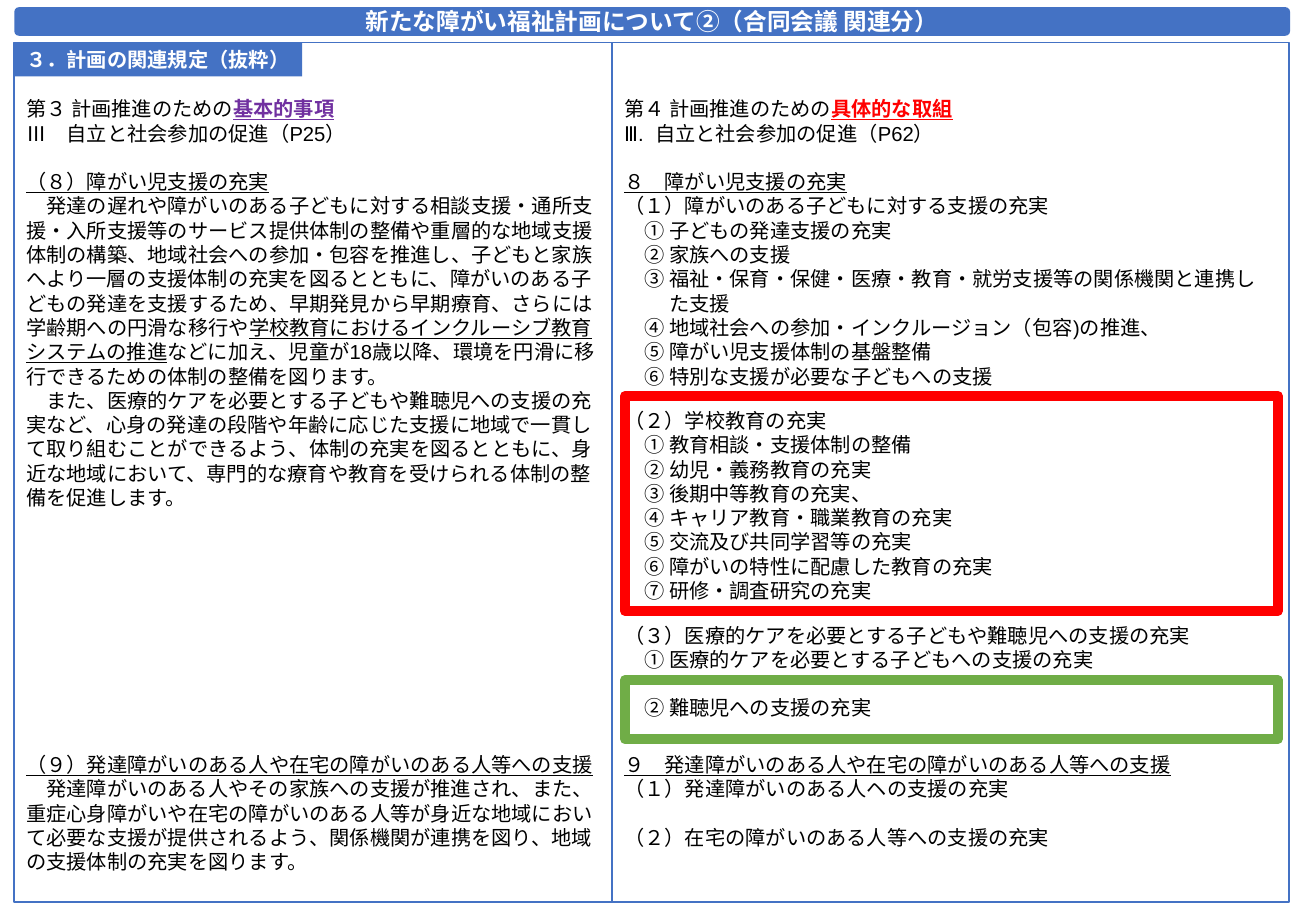
import dataclasses
import pptx
import pptx.dml.color
import pptx.enum.shapes
import pptx.enum.text
import pptx.util
from pptx.util import Cm, Pt

SHAPE = pptx.enum.shapes.MSO_SHAPE
ANCHOR = pptx.enum.text.MSO_ANCHOR
ALIGN = pptx.enum.text.PP_ALIGN


@dataclasses.dataclass(frozen=True)
class Theme:
    """Colours, fonts, type sizes and line widths."""
    blue: str = "4472C4"
    white: str = "FFFFFF"
    black: str = "000000"
    purple: str = "7030A0"
    red: str = "FF0000"
    green: str = "70AD47"
    head_font: str = "Calibri"
    body_font: str = "Arial"
    title: int = 14
    body: int = 12
    thin: int = 1
    thick: int = 6


T = Theme()
ITEM = 0.42
CONTINUED = 0.94
LINE_GAP = 14.4
BLOCK_GAP = 12


@dataclasses.dataclass
class Para:
    """One paragraph: pieces of (text, underlined, accent), gap in points, indents in cm."""
    pieces: list
    gap: float = 0
    left: float = 0
    first: float = 0


def plain(text, **place):
    """Return a paragraph in the ordinary style."""
    return Para([(text, False, None)], **place)


def heading(text, gap):
    """Return an underlined paragraph."""
    return Para([(text, True, None)], gap)


def items(*texts):
    """Return indented list lines."""
    return [plain(text, left=ITEM) for text in texts]


BASICS = [
    Para([("第３ 計画推進のための", False, None), ("基本的事項", True, T.purple)]),
    plain("Ⅲ　自立と社会参加の促進（P25）"),
    heading("（８）障がい児支援の充実", LINE_GAP),
    Para([
        ("発達の遅れや障がいのある子どもに対する相談支援・通所支援・入所支援等の"
         "サービス提供体制の整備や重層的な地域支援体制の構築、地域社会への参加・包容を推進し、"
         "子どもと家族へより一層の支援体制の充実を図るとともに、障がいのある子どもの発達を"
         "支援するため、早期発見から早期療育、さらには学齢期への円滑な移行や", False, None),
        ("学校教育におけるインクルーシブ教育システムの推進", True, None),
        ("などに加え、児童が18歳以降、環境を円滑に移行できるための体制の整備を図ります。",
         False, None),
    ], first=ITEM),
    plain("また、医療的ケアを必要とする子どもや難聴児への支援の充実など、心身の発達の段階や"
          "年齢に応じた支援に地域で一貫して取り組むことができるよう、体制の充実を図るとともに、"
          "身近な地域において、専門的な療育や教育を受けられる体制の整備を促進します。", first=ITEM),
    heading("（９）発達障がいのある人や在宅の障がいのある人等への支援", 10 * LINE_GAP),
    plain("発達障がいのある人やその家族への支援が推進され、また、重症心身障がいや在宅の"
          "障がいのある人等が身近な地域において必要な支援が提供されるよう、関係機関が連携を図り、"
          "地域の支援体制の充実を図ります。", first=ITEM),
]

MEASURES = [
    Para([("第４ 計画推進のための", False, None), ("具体的な取組", True, T.red)]),
    plain("Ⅲ.  自立と社会参加の促進（P62）"),
    heading("８　障がい児支援の充実", LINE_GAP),
    plain("（１）障がいのある子どもに対する支援の充実"),
    *items("① 子どもの発達支援の充実", "② 家族への支援",
           "③ 福祉・保育・保健・医療・教育・就労支援等の関係機関と連携し"),
    plain("た支援", left=CONTINUED),
    *items("④ 地域社会への参加・インクルージョン（包容)の推進、",
           "⑤ 障がい児支援体制の基盤整備", "⑥ 特別な支援が必要な子どもへの支援"),
    plain("（２）学校教育の充実", gap=BLOCK_GAP),
    *items("① 教育相談・支援体制の整備", "② 幼児・義務教育の充実", "③ 後期中等教育の充実、",
           "④ キャリア教育・職業教育の充実", "⑤ 交流及び共同学習等の充実",
           "⑥ 障がいの特性に配慮した教育の充実", "⑦ 研修・調査研究の充実"),
    plain("（３）医療的ケアを必要とする子どもや難聴児への支援の充実", gap=BLOCK_GAP),
    *items("① 医療的ケアを必要とする子どもへの支援の充実"),
    plain("② 難聴児への支援の充実", gap=LINE_GAP, left=ITEM),
    heading("９　発達障がいのある人や在宅の障がいのある人等への支援", 19),
    plain("（１）発達障がいのある人ヘの支援の充実"),
    plain("（２）在宅の障がいのある人等への支援の充実", gap=LINE_GAP),
]


def rgb(colour):
    """Return a colour object for a hex string."""
    return pptx.dml.color.RGBColor.from_string(colour)


def add_box(s, kind, box, fill=None, line=None, width=T.thin):
    """Add a preset shape in a box given in centimetres."""
    sp = s.shapes.add_shape(kind, *[Cm(v) for v in box])
    sp.shadow.inherit = False
    if fill:
        sp.fill.solid()
        sp.fill.fore_color.rgb = rgb(fill)
    else:
        sp.fill.background()
    if line:
        sp.line.color.rgb = rgb(line)
        sp.line.width = Pt(width)
    else:
        sp.line.fill.background()
    return sp


def style_run(r, font, size, colour, bold=False, underline=False):
    """Format one run."""
    r.font.name = font
    r.font.size = Pt(size)
    r.font.color.rgb = rgb(colour)
    r.font.bold = bold
    r.font.underline = underline


def add_banner(s, kind, box, text, size, align):
    """Add a blue bar with bold white text."""
    tf = add_box(s, kind, box, fill=T.blue).text_frame
    tf.text = text
    tf.vertical_anchor = ANCHOR.MIDDLE
    tf.margin_top = tf.margin_bottom = 0
    p = tf.paragraphs[0]
    p.alignment = align
    style_run(p.runs[0], T.head_font, size, T.white, bold=True)


def add_column(s, box, paras):
    """Add an outlined column of provisions."""
    tf = add_box(s, SHAPE.RECTANGLE, box, line=T.blue).text_frame
    tf.word_wrap = True
    tf.vertical_anchor = ANCHOR.TOP
    tf.margin_top = Cm(1.13)
    for i, para in enumerate(paras):
        p = tf.add_paragraph() if i else tf.paragraphs[0]
        p.alignment = ALIGN.LEFT
        p.space_before = Pt(para.gap)
        pPr = p._p.get_or_add_pPr()
        pPr.set("marL", str(Cm(para.left)))
        pPr.set("indent", str(Cm(para.first)))
        for text, underline, accent in para.pieces:
            r = p.add_run()
            r.text = text
            style_run(r, T.body_font, T.body, accent or T.black, bool(accent), underline)


def add_comparison(s, box):
    """Place both columns, the section tag and the highlight frames in a box."""
    x, y, w, h = box
    split = 12.5
    add_column(s, (x, y, split, h), BASICS)
    add_banner(s, SHAPE.RECTANGLE, (x, y, 6.02, 0.71), "３．計画の関連規定（抜粋）",
               T.body, ALIGN.LEFT)
    add_column(s, (x + split, y, w - split, h), MEASURES)
    for top, height, colour in ((7.39, 4.5, T.red), (13.33, 1.24, T.green)):
        add_box(s, SHAPE.RECTANGLE, (x + split + 0.27, y + top, 13.64, height),
                line=colour, width=T.thick)


def main():
    """Build the slide and save it."""
    prs = pptx.Presentation()
    prs.slide_width, prs.slide_height = Cm(27.51), Cm(19.05)
    s = prs.slides.add_slide(prs.slide_layouts[6])
    add_banner(s, SHAPE.ROUNDED_RECTANGLE, (0.3, 0.15, 26.67, 0.6),
               "新たな障がい福祉計画について②（合同会議 関連分）", T.title, ALIGN.CENTER)
    add_comparison(s, (0.3, 0.89, 26.65, 17.98))
    prs.save("out.pptx")


if __name__ == "__main__":
    main()
